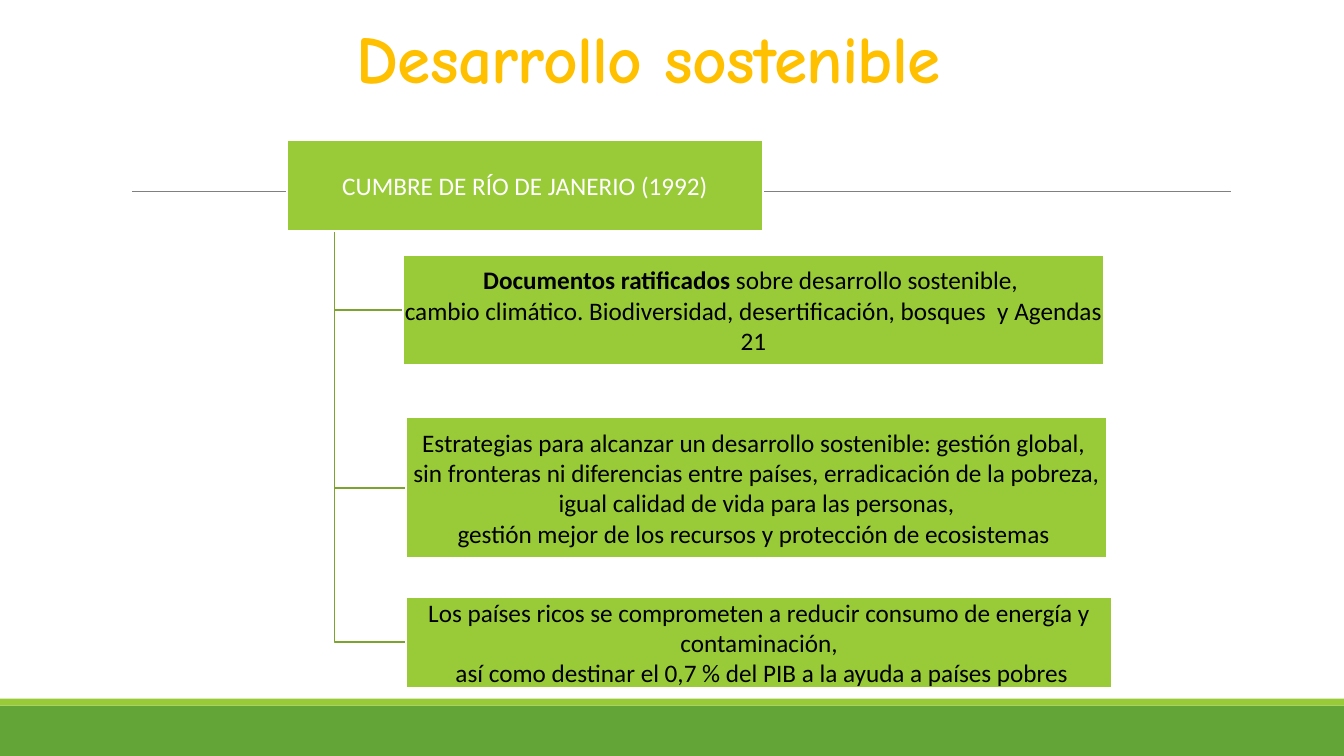
from dataclasses import dataclass

from lxml import etree
from pptx import Presentation
from pptx import util as u
from pptx.dml.color import RGBColor
from pptx.enum import shapes, text
from pptx.oxml.ns import qn


@dataclass(frozen=True)
class Theme:
    lime: str = "99CB38"
    green: str = "63A537"
    branch: str = "7BA32D"
    gold: str = "FFC000"
    grey: str = "808080"
    white: str = "FFFFFF"
    black: str = "000000"
    body: str = "Calibri"
    head: str = "Comic Neue"
    size: int = 18
    title: int = 48


class Deck:
    def __init__(self, theme, wide, high):
        self.theme = theme
        self.prs = Presentation()
        self.prs.slide_width, self.prs.slide_height = u.Pt(wide), u.Pt(high)
        self.slide = self.prs.slides.add_slide(self.prs.slide_layouts[6])

    def stroke(self, shape, color, width):
        shape.line.color.rgb = RGBColor.from_string(color)
        shape.line.width = u.Pt(width)

    def rect(self, area, fill):
        shape = self.slide.shapes.add_shape(
            shapes.MSO_SHAPE.RECTANGLE, *map(u.Pt, area))
        shape.shadow.inherit = False
        shape.fill.solid()
        shape.fill.fore_color.rgb = RGBColor.from_string(fill)
        shape.line.fill.background()
        return shape

    def frame(self, shape, inset, anchor):
        frame = shape.text_frame
        form = dict(word_wrap=True, vertical_anchor=anchor)
        for side in ("left", "top", "right", "bottom"):
            form[f"margin_{side}"] = u.Pt(inset)
        for key, value in form.items():
            setattr(frame, key, value)
        return frame

    def run(self, para, words, color, **form):
        run = para.add_run()
        run.text = words
        run.font.color.rgb = RGBColor.from_string(color)
        for key, value in form.items():
            setattr(run.font, key, value)
        return run

    def box(self, area, lines, color):
        """Draw a filled box; each line is a list of (words, bold) runs."""
        shape = self.rect(area, self.theme.lime)
        self.stroke(shape, self.theme.white, 1.25)
        frame = self.frame(shape, 0.7, text.MSO_ANCHOR.MIDDLE)
        for i, line in enumerate(lines):
            para = frame.add_paragraph() if i else frame.paragraphs[0]
            para.alignment = text.PP_ALIGN.CENTER
            for words, bold in line:
                self.run(para, words, color, bold=bold,
                         name=self.theme.body, size=u.Pt(self.theme.size))

    def rule(self, left, right, y):
        line = self.slide.shapes.add_connector(
            shapes.MSO_CONNECTOR.STRAIGHT, *map(u.Pt, (left, y, right, y)))
        self.stroke(line, self.theme.grey, 0.5)
        etree.SubElement(line._element.spPr, qn("a:effectLst"))

    def elbow(self, x, top, area):
        """Run down from (x, top), then right to the middle of a box's side."""
        left, y, _, high = area
        mid = y + high / 2
        pen = self.slide.shapes.build_freeform(u.Pt(x), u.Pt(top))
        pen.add_line_segments(
            [(u.Pt(x), u.Pt(mid)), (u.Pt(left), u.Pt(mid))], close=False)
        shape = pen.convert_to_shape()
        shape.shadow.inherit = False
        shape.fill.background()
        self.stroke(shape, self.theme.branch, 1.25)

    def title(self, area, words):
        shape = self.slide.shapes.add_textbox(*map(u.Pt, area))
        frame = self.frame(shape, 7.2, text.MSO_ANCHOR.BOTTOM)
        para = frame.paragraphs[0]
        para.line_spacing = 0.85
        run = self.run(para, words, self.theme.gold, bold=True,
                       name=self.theme.head, size=u.Pt(self.theme.title))
        run.font._element.set("spc", "-50")


ROOT = (205, 100, 340, 65)
ITEMS = [
    ((288, 182.2, 500.4, 78.5), [
        [("Documentos ratificados", True),
         (" sobre desarrollo sostenible, ", False)],
        [("cambio climático. Biodiversidad, desertificación, "
          "bosques  y Agendas 21", False)]]),
    ((290.2, 298, 500.4, 100.8), [
        [("Estrategias para alcanzar un desarrollo sostenible: "
          "gestión global, ", False)],
        [("sin fronteras ni diferencias entre países, "
          "erradicación de la pobreza,", False)],
        [(" igual calidad de vida para las personas, ", False)],
        [("gestión mejor de los recursos y protección de ecosistemas ",
          False)]]),
    ((290.2, 426.2, 504, 65), [
        [("Los países ricos se comprometen a reducir consumo de energía "
          "y contaminación,", False)],
        [(" así como destinar el 0,7 % del PIB a la ayuda a países pobres",
          False)]]),
]


def main():
    theme = Theme()
    deck = Deck(theme, 960, 540)
    deck.rect((0, 504, 960, 36), theme.green)
    deck.rect((0, 499, 960, 5), theme.lime)
    deck.rule(94.3, 879.1, 136.8)
    left, top, wide, high = ROOT
    for area, _ in reversed(ITEMS):
        deck.elbow(left + wide / 10, top + high, area)
    deck.box(ROOT, [[("CUMBRE DE RÍO DE JANERIO (1992)", False)]], theme.white)
    for area, lines in ITEMS:
        deck.box(area, lines, theme.black)
    deck.title((247.7, 19.4, 494, 57.6), "Desarrollo sostenible")
    deck.prs.save("out.pptx")


if __name__ == "__main__":
    main()
